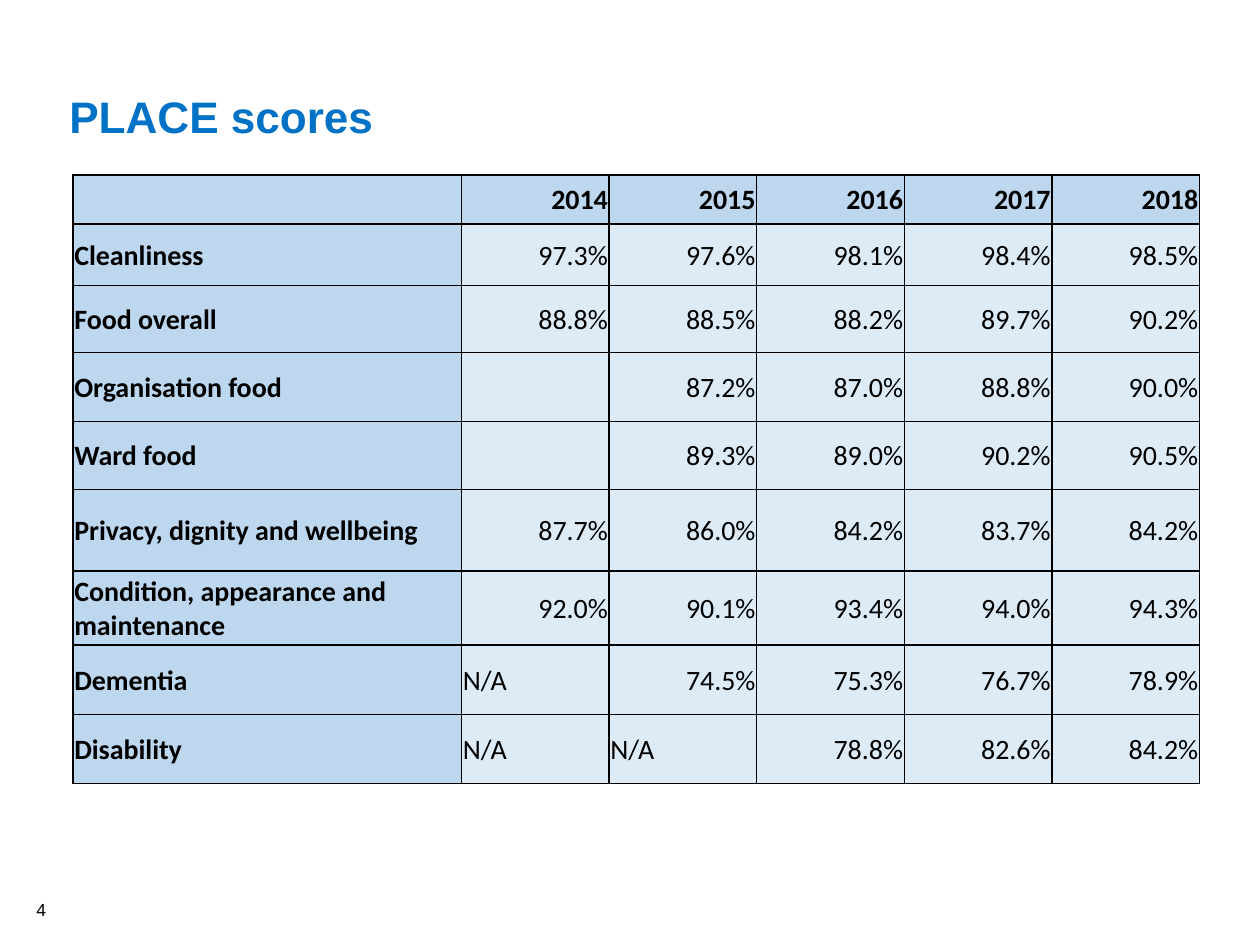
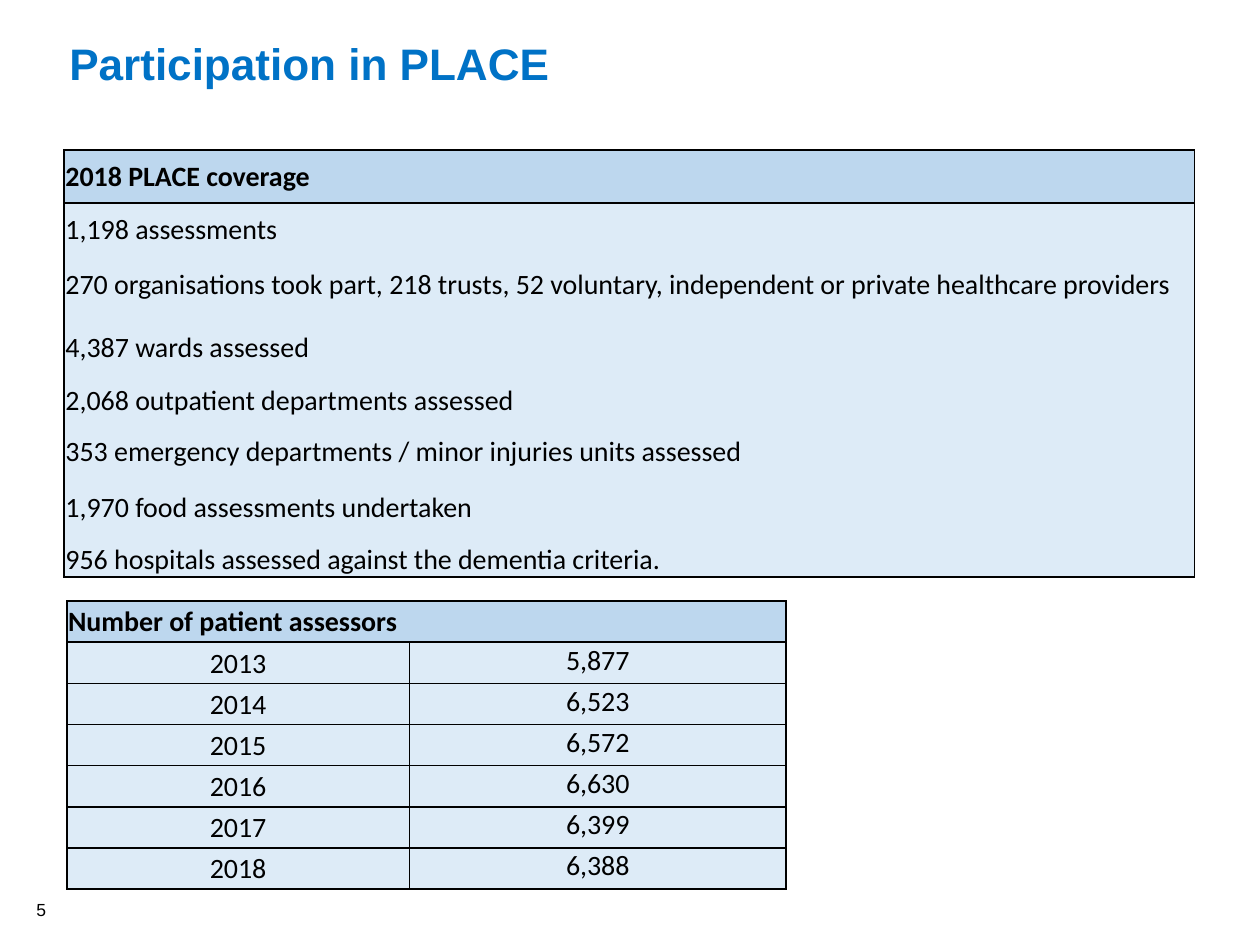
from collections import namedtuple

from lxml import etree
from pptx import Presentation
from pptx.dml.color import RGBColor
from pptx.enum.text import MSO_ANCHOR as Anchor, MSO_AUTO_SIZE as AutoSize, PP_ALIGN as Align
from pptx.oxml.ns import qn
from pptx.util import Inches, Pt

COLORS = {"title": "0072C6", "text": "000000", "border": "000000",
          "header": "BDD7EE", "body": "DDEBF7"}
TITLE_FONT, TABLE_FONT = "Arial", "Calibri"
WIDTH, HEIGHT = Inches(10), Inches(7.5)
TITLE_ONLY = 5
SIDES = "LRTB"

# Boxes are given in percent of the slide's width and height.
Box = namedtuple("Box", "left top width height")
Look = namedtuple("Look", "header align anchor sides")

SCORES = [
    ["", "2014", "2015", "2016", "2017", "2018"],
    ["Cleanliness", "97.3%", "97.6%", "98.1%", "98.4%", "98.5%"],
    ["Food overall", "88.8%", "88.5%", "88.2%", "89.7%", "90.2%"],
    ["Organisation food", "", "87.2%", "87.0%", "88.8%", "90.0%"],
    ["Ward food", "", "89.3%", "89.0%", "90.2%", "90.5%"],
    ["Privacy, dignity and wellbeing", "87.7%", "86.0%", "84.2%", "83.7%", "84.2%"],
    ["Condition, appearance and maintenance", "92.0%", "90.1%", "93.4%", "94.0%", "94.3%"],
    ["Dementia", "N/A", "74.5%", "75.3%", "76.7%", "78.9%"],
    ["Disability", "N/A", "N/A", "78.8%", "82.6%", "84.2%"],
]
COVERAGE = [
    ["2018 PLACE coverage"],
    ["1,198 assessments"],
    ["270 organisations took part, 218 trusts, 52 voluntary, "
     "independent or private healthcare providers"],
    ["4,387 wards assessed"],
    ["2,068 outpatient departments assessed"],
    ["353 emergency departments / minor injuries units assessed"],
    ["1,970 food assessments undertaken"],
    ["956 hospitals assessed against the dementia criteria."],
]
ASSESSORS = [
    ["Number of patient assessors", ""],
    ["2013", "5,877"],
    ["2014", "6,523"],
    ["2015", "6,572"],
    ["2016", "6,630"],
    ["2017", "6,399"],
    ["2018", "6,388"],
]


def to_lengths(box):
    return [round(share * whole / 100)
            for share, whole in zip(box, (WIDTH, HEIGHT, WIDTH, HEIGHT))]


def set_font(para, name, size, color, bold=False):
    font = para.font
    font.name, font.size, font.bold = name, Pt(size), bold
    font.color.rgb = RGBColor.from_string(COLORS[color])


def add_page(deck, title, number, title_top):
    page = deck.slides.add_slide(deck.slide_layouts[TITLE_ONLY])
    heading = page.shapes.title
    place(heading, Box(4.5, title_top, 71.7, 7.2))
    write_line(heading.text_frame, title, TITLE_FONT, 25.2, "title", True)

    footer = page.shapes.add_textbox(*to_lengths(Box(1.9, 94.67, 23.2, 3.2)))
    write_line(footer.text_frame, str(number), TITLE_FONT, 10, "text")
    return page


def place(shape, box):
    shape.left, shape.top, shape.width, shape.height = to_lengths(box)


def write_line(frame, text, *font):
    frame.text = text
    frame.word_wrap = True
    frame.auto_size = AutoSize.NONE
    frame.vertical_anchor = Anchor.MIDDLE
    para = frame.paragraphs[0]
    para.alignment = Align.LEFT
    set_font(para, *font)


def set_borders(cell, sides):
    """Rule the named sides and leave the others clear."""
    props = cell._tc.get_or_add_tcPr()
    for index, side in enumerate(SIDES):
        line = etree.Element(qn(f"a:ln{side}"), w=str(Pt(1)))
        if side in sides:
            fill = etree.SubElement(line, qn("a:solidFill"))
            etree.SubElement(fill, qn("a:srgbClr"), val=COLORS["border"])
        else:
            etree.SubElement(line, qn("a:noFill"))
        props.insert(index, line)


def format_cell(cell, text, look):
    cell.text = text
    cell.margin_left = cell.margin_right = cell.margin_top = Inches(0.01)
    cell.margin_bottom = 0
    cell.vertical_anchor = look.anchor
    para = cell.text_frame.paragraphs[0]
    para.alignment = look.align
    set_font(para, TABLE_FONT, 16, "text", look.header)
    cell.fill.solid()
    cell.fill.fore_color.rgb = RGBColor.from_string(COLORS["header" if look.header else "body"])
    set_borders(cell, look.sides)


def add_grid(page, box, rows, column_shares, row_shares, look_of):
    """Add a table; look_of(row, column, text) gives the look of each cell."""
    left, top, width, height = to_lengths(box)
    table = page.shapes.add_table(len(rows), len(rows[0]), left, top, width, height).table
    for column, share in zip(table.columns, column_shares):
        column.width = round(width * share / sum(column_shares))
    for row, share in zip(table.rows, row_shares):
        row.height = round(height * share / sum(row_shares))
    for r, texts in enumerate(rows):
        for c, text in enumerate(texts):
            format_cell(table.cell(r, c), text, look_of(r, c, text))


def score_look(row, column, text):
    align = Align.LEFT if column == 0 or text == "N/A" else Align.RIGHT
    return Look(row == 0 or column == 0, align, Anchor.MIDDLE, SIDES)


def coverage_look(row, column, text):
    sides = "LR"
    if row <= 1:
        sides += "T"
    if row in (0, len(COVERAGE) - 1):
        sides += "B"
    return Look(row == 0, Align.LEFT, Anchor.MIDDLE if row < 3 else Anchor.BOTTOM, sides)


def assessor_look(row, column, text):
    if row == 0:
        return Look(True, Align.LEFT, Anchor.MIDDLE, "RTB" if column else "LTB")
    return Look(False, Align.CENTER, Anchor.TOP if column else Anchor.MIDDLE, SIDES)


def build_scores(deck):
    page = add_page(deck, "PLACE scores", 4, 8.67)
    add_grid(page, Box(5.8, 18.53, 89.4, 64.4), SCORES, [3.08] + [1.17] * 5,
             [0.39, 0.49, 0.53, 0.55, 0.54, 0.65, 0.59, 0.55, 0.55], score_look)


def build_participation(deck):
    page = add_page(deck, "Participation in PLACE", 5, 3.1)
    add_grid(page, Box(5.3, 63.6, 57.1, 30.53), ASSESSORS, [2.72, 2.99],
             [1] * len(ASSESSORS), assessor_look)
    add_grid(page, Box(5.1, 15.87, 89.7, 45.2), COVERAGE, [1],
             [0.42, 0.41, 0.46, 0.41, 0.42, 0.41, 0.44, 0.41], coverage_look)


def main():
    deck = Presentation()
    deck.slide_width, deck.slide_height = WIDTH, HEIGHT
    build_scores(deck)
    build_participation(deck)
    deck.save("out.pptx")


if __name__ == "__main__":
    main()
